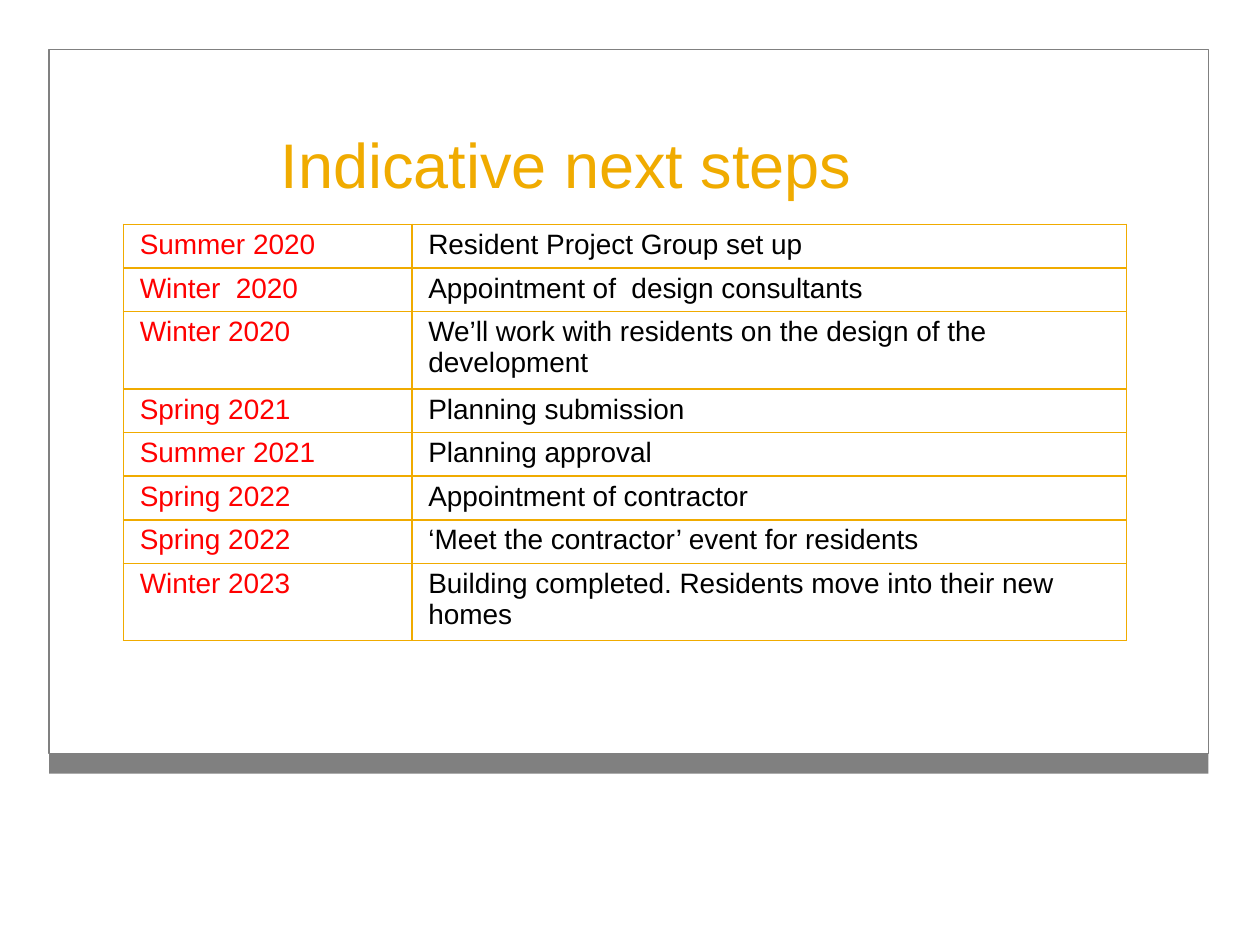
from lxml import etree
from pptx import Presentation
from pptx.dml.color import RGBColor
from pptx.enum import shapes, text
from pptx.oxml import ns
from pptx.util import Inches, Pt

FONT = "Arial"
COLOURS = {"accent": "F0AB00", "date": "FF0000", "step": "000000", "frame": "808080"}
STEPS = [
    ("Summer 2020", "Resident Project Group set up"),
    ("Winter  2020", "Appointment of  design consultants"),
    ("Winter 2020", "We’ll work with residents on the design of the development"),
    ("Spring 2021", "Planning submission"),
    ("Summer 2021", "Planning approval"),
    ("Spring 2022", "Appointment of contractor"),
    ("Spring 2022", "‘Meet the contractor’ event for residents"),
    ("Winter 2023", "Building completed. Residents move into their new homes"),
]
ONE_LINE, TWO_LINES = 0.34, 0.61
WRAP_LENGTH = 50


def colour(name):
    return RGBColor.from_string(COLOURS[name])


def add_run(paragraph, words, size, colour_name):
    run = paragraph.add_run()
    run.text = words
    run.font.name = FONT
    run.font.size = Pt(size)
    run.font.color.rgb = colour(colour_name)


def add_frame(slide, left, top, width, height, bar_height):
    """Outlined panel with a solid bar along its lower edge."""
    bar = slide.shapes.add_shape(shapes.MSO_SHAPE.RECTANGLE, Inches(left),
                                 Inches(top + height), Inches(width), Inches(bar_height))
    bar.fill.solid()
    bar.fill.fore_color.rgb = colour("frame")
    bar.line.fill.background()
    panel = slide.shapes.add_shape(shapes.MSO_SHAPE.RECTANGLE, Inches(left),
                                   Inches(top), Inches(width), Inches(height))
    panel.fill.background()
    panel.line.color.rgb = colour("frame")
    panel.line.width = Pt(0.75)
    for shape in (bar, panel):
        shape.shadow.inherit = False


def place_title(slide, left, top, width, height):
    title = slide.shapes.title
    title.left, title.top = Inches(left), Inches(top)
    title.width, title.height = Inches(width), Inches(height)
    frame = title.text_frame
    frame.margin_left = frame.margin_top = frame.margin_right = frame.margin_bottom = 0
    frame.word_wrap = True
    frame.auto_size = text.MSO_AUTO_SIZE.SHAPE_TO_FIT_TEXT
    frame.vertical_anchor = text.MSO_ANCHOR.TOP
    paragraph = frame.paragraphs[0]
    paragraph.alignment = text.PP_ALIGN.CENTER
    paragraph.line_spacing = Pt(66)
    add_run(paragraph, "Indicative next steps", 36, "accent")


def set_borders(cell):
    properties = cell._tc.get_or_add_tcPr()
    for position, side in enumerate(("a:lnL", "a:lnR", "a:lnT", "a:lnB")):
        line = etree.Element(ns.qn(side), w=str(Pt(1)))
        fill = etree.SubElement(line, ns.qn("a:solidFill"))
        etree.SubElement(fill, ns.qn("a:srgbClr"), val=COLOURS["accent"])
        properties.insert(position, line)


def fill_cell(cell, words, colour_name):
    cell.fill.background()
    cell.margin_left = cell.margin_right = Inches(0.13)
    cell.margin_top = cell.margin_bottom = Inches(0.04)
    add_run(cell.text_frame.paragraphs[0], words, 16, colour_name)
    set_borders(cell)


def add_timeline(slide, left, top, column_widths):
    heights = [TWO_LINES if len(step) > WRAP_LENGTH else ONE_LINE for _, step in STEPS]
    table = slide.shapes.add_table(len(STEPS), len(column_widths), Inches(left), Inches(top),
                                   Inches(sum(column_widths)), Inches(sum(heights))).table
    table.first_row = table.horz_banding = False
    for column, width in zip(table.columns, column_widths):
        column.width = Inches(width)
    for row, height, (date, step) in zip(table.rows, heights, STEPS):
        row.height = Inches(height)
        fill_cell(row.cells[0], date, "date")
        fill_cell(row.cells[1], step, "step")


def main():
    presentation = Presentation()
    presentation.slide_width, presentation.slide_height = Inches(10), Inches(7.5)
    slide = presentation.slides.add_slide(presentation.slide_layouts[5])
    add_frame(slide, 0.39, 0.39, 9.2, 5.59, 0.16)
    place_title(slide, 0.91, 0.68, 7.17, 0.81)
    add_timeline(slide, 0.98, 1.78, (2.29, 5.67))
    presentation.save("out.pptx")


if __name__ == "__main__":
    main()
